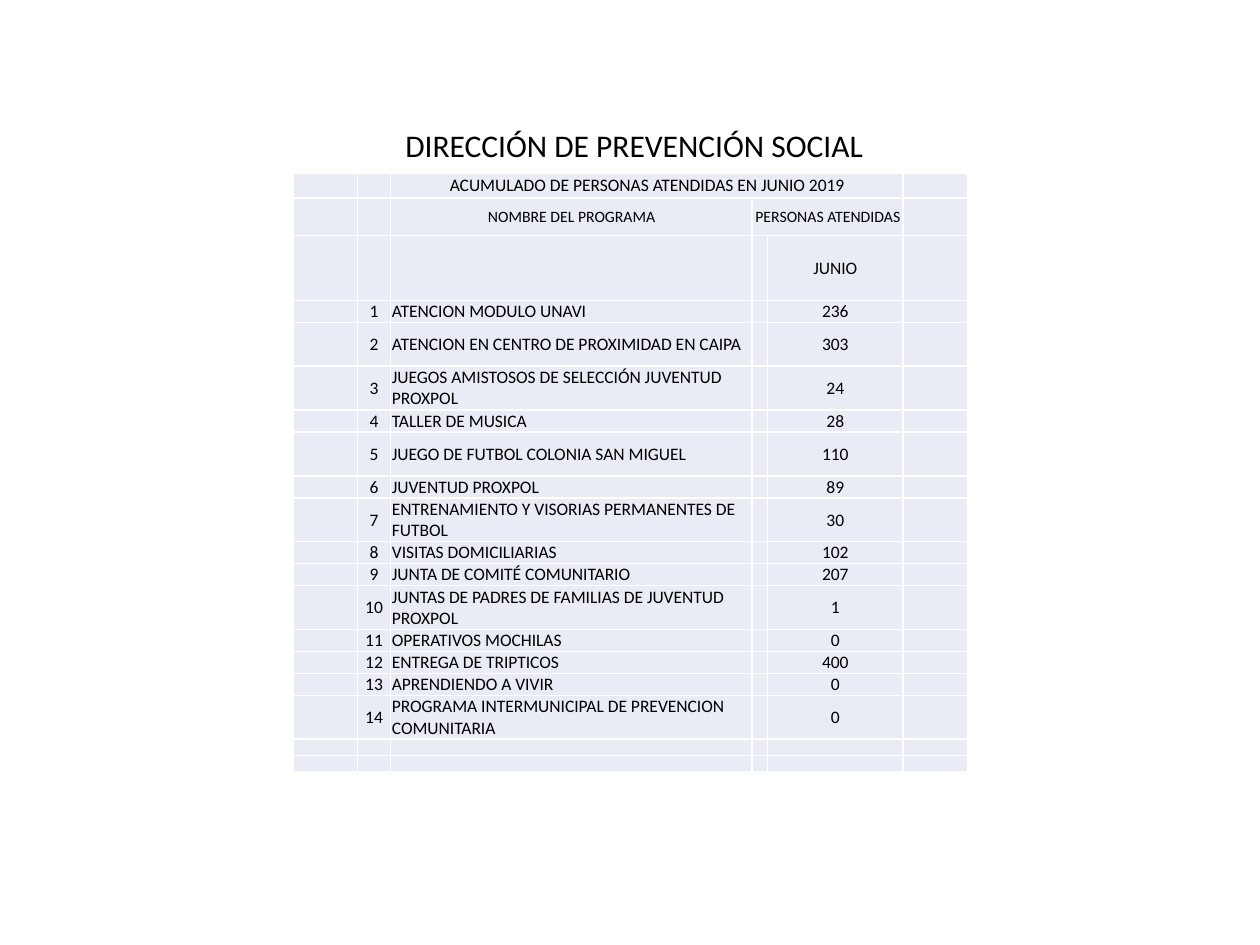
"""Builds the slide with the people served by each social prevention programme."""
from lxml.etree import SubElement
from pptx import Presentation
from pptx.dml.color import RGBColor
from pptx.enum.text import MSO_ANCHOR as Anchor, PP_ALIGN as Align
from pptx.oxml.ns import qn
from pptx.util import Pt

TITLE = "DIRECCIÓN DE PREVENCIÓN SOCIAL"
PROGRAMS = [
    ("ATENCION MODULO UNAVI", 236),
    ("ATENCION EN CENTRO DE PROXIMIDAD EN CAIPA", 303),
    ("JUEGOS AMISTOSOS DE SELECCIÓN JUVENTUD PROXPOL", 24),
    ("TALLER DE MUSICA", 28),
    ("JUEGO DE FUTBOL COLONIA SAN MIGUEL", 110),
    ("JUVENTUD PROXPOL", 89),
    ("ENTRENAMIENTO Y VISORIAS PERMANENTES DE FUTBOL", 30),
    ("VISITAS DOMICILIARIAS", 102),
    ("JUNTA DE COMITÉ COMUNITARIO", 207),
    ("JUNTAS DE PADRES DE FAMILIAS DE JUVENTUD PROXPOL", 1),
    ("OPERATIVOS MOCHILAS", 0),
    ("ENTREGA DE TRIPTICOS", 400),
    ("APRENDIENDO A VIVIR", 0),
    ("PROGRAMA INTERMUNICIPAL DE PREVENCION COMUNITARIA", 0),
]
HEADINGS = [
    (0, 2, "ACUMULADO DE PERSONAS ATENDIDAS EN JUNIO 2019", 10),
    (1, 2, "NOMBRE DEL PROGRAMA", 9),
    (1, 3, "PERSONAS ATENDIDAS", 9),
    (2, 4, "JUNIO", 10),
]
MERGES = [((0, 2), (0, 4)), ((1, 3), (1, 4))]
COLUMN_WIDTHS = [36.9, 19.1, 206.6, 8.6, 77.7, 36.9]
HEADING_HEIGHTS = [14.2, 21.4, 37.1]
LINE_HEIGHT, EMPTY_HEIGHT, EMPTY_ROWS = 12.55, 9.3, 2
LONG_NAME = 30
FONT, INK, CELL_FILL, BORDER = "Calibri", "000000", "E9EBF5", "FFFFFF"


def color(value):
    """Return the colour of a hex string."""
    return RGBColor.from_string(value)


def write(frame, text, size=10, align=Align.CENTER):
    """Put one formatted line of text in a text frame."""
    para = frame.paragraphs[0]
    para.alignment = align
    span = para.add_run()
    span.text = text
    span.font.size = Pt(size)
    span.font.name = FONT
    span.font.color.rgb = color(INK)


def style_cell(cell):
    """Give a cell its borders, fill, insets and small empty line."""
    properties = cell._tc.get_or_add_tcPr()
    for side in ("a:lnL", "a:lnR", "a:lnT", "a:lnB"):
        line = SubElement(properties, qn(side), w=str(Pt(1)))
        SubElement(SubElement(line, qn("a:solidFill")), qn("a:srgbClr"), val=BORDER)
    cell.fill.solid()
    cell.fill.fore_color.rgb = color(CELL_FILL)
    cell.margin_left = cell.margin_right = Pt(0.7)
    cell.margin_top, cell.margin_bottom = Pt(0.3), Pt(0)
    cell.vertical_anchor = Anchor.MIDDLE
    if not cell.text:
        SubElement(cell.text_frame.paragraphs[0]._p, qn("a:endParaRPr"), sz="600")


def add_title(page):
    """Add the title above the table."""
    box = page.shapes.add_textbox(Pt(116), Pt(68.4), Pt(493), Pt(29))
    box.text_frame.word_wrap = True
    write(box.text_frame, TITLE, size=18)


def add_program_table(page):
    """Add the table of programmes and people served."""
    heights = HEADING_HEIGHTS + [
        LINE_HEIGHT * (2 if len(name) > LONG_NAME else 1) for name, _ in PROGRAMS
    ] + [EMPTY_HEIGHT] * EMPTY_ROWS
    table = page.shapes.add_table(
        len(heights), len(COLUMN_WIDTHS), Pt(167.3), Pt(99),
        Pt(sum(COLUMN_WIDTHS)), Pt(sum(heights))).table
    table.first_row = table.horz_banding = False
    for column, width in zip(table.columns, COLUMN_WIDTHS):
        column.width = Pt(width)
    for row, height in zip(table.rows, heights):
        row.height = Pt(height)
    for start, end in MERGES:
        table.cell(*start).merge(table.cell(*end))
    for row, column, text, size in HEADINGS:
        write(table.cell(row, column).text_frame, text, size=size)
    for number, (name, people) in enumerate(PROGRAMS, 1):
        row = number + len(HEADING_HEIGHTS) - 1
        write(table.cell(row, 1).text_frame, str(number))
        write(table.cell(row, 2).text_frame, name, align=Align.LEFT)
        write(table.cell(row, 4).text_frame, str(people))
    for cell in table.iter_cells():
        style_cell(cell)


def main():
    """Build and save the deck."""
    deck = Presentation()
    deck.slide_width, deck.slide_height = Pt(720), Pt(540)
    page = deck.slides.add_slide(deck.slide_layouts[6])
    add_title(page)
    add_program_table(page)
    deck.save("out.pptx")


if __name__ == "__main__":
    main()
